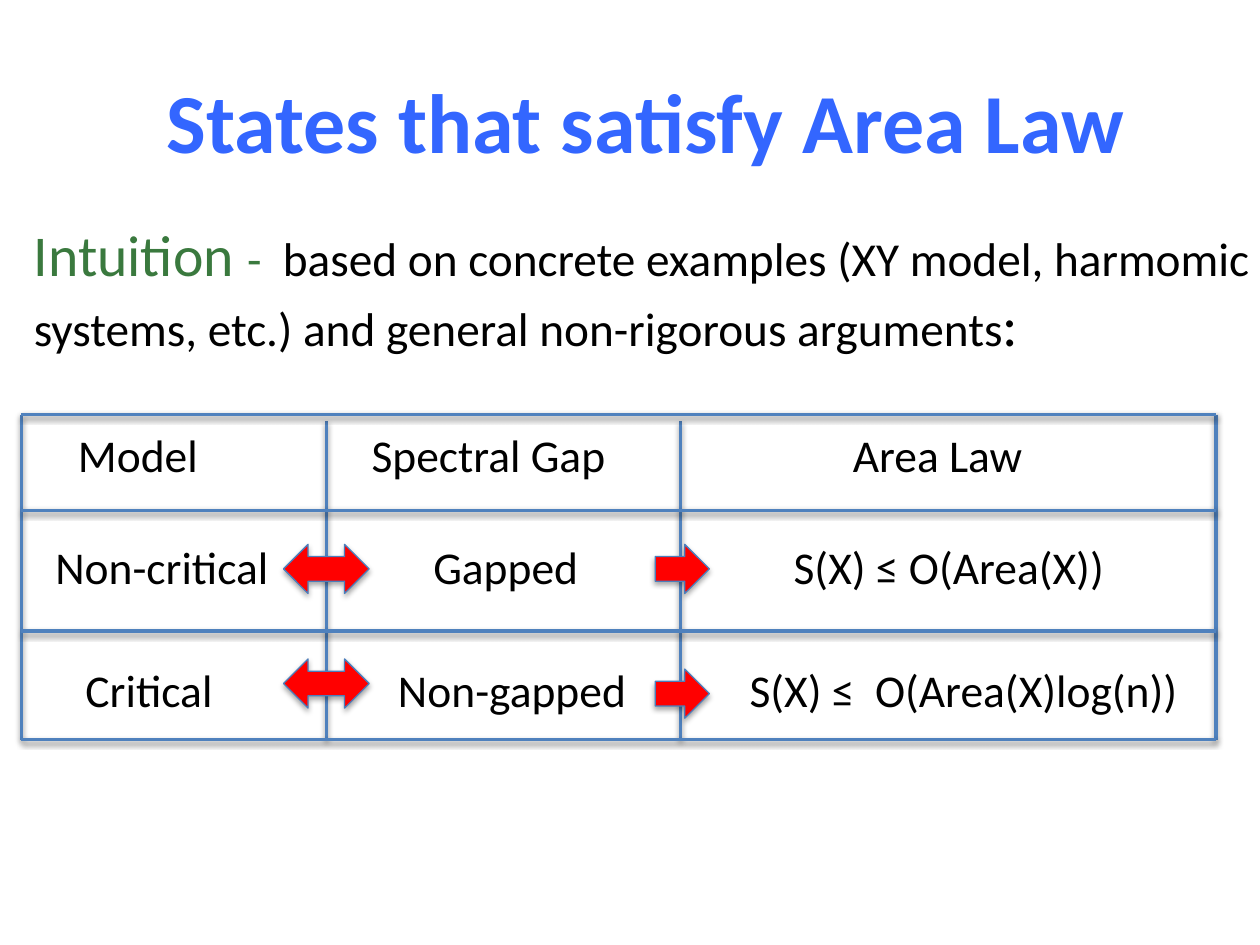
from lxml import etree
from pptx import Presentation
from pptx.dml.color import RGBColor
from pptx.enum.shapes import MSO_CONNECTOR, MSO_SHAPE
from pptx.enum.text import MSO_ANCHOR, PP_ALIGN
from pptx.oxml.ns import qn
from pptx.util import Inches, Pt

BLUE = RGBColor(0x33, 0x66, 0xFF)
GREEN = RGBColor(0x3A, 0x79, 0x3E)
BLACK = RGBColor(0, 0, 0)
RED = RGBColor(0xFF, 0, 0)
GRID = RGBColor(0x4F, 0x81, 0xBD)
OUTLINE = RGBColor(0x4B, 0x7E, 0xBC)
CENTER = PP_ALIGN.CENTER
MIDDLE = MSO_ANCHOR.MIDDLE
STRAIGHT = MSO_CONNECTOR.STRAIGHT
BOTH_WAYS = MSO_SHAPE.LEFT_RIGHT_ARROW
ONE_WAY = MSO_SHAPE.RIGHT_ARROW

INSET = 0.1
LEFT, RIGHT = 0.17, 9.65
TOP, BOTTOM = 3.29, 5.87
INNER_TOP = 3.34
# Each column entry: text and where it starts on the slide, in inches
HEADER = (("Model", 0.62), ("Spectral Gap", 2.95), ("Area Law", 6.77))
BODY = (
    (("Non-critical", 0.44), ("Gapped", 3.44), ("S(X) ≤ O(Area(X))", 6.3)),
    (("Critical", 0.68), ("Non-gapped", 3.16),
     ("S(X) ≤  O(Area(X)log(n))", 5.95)),
)
INTUITION = (
    ("Intuition ", 33, GREEN),
    ("-  ", 27, GREEN),
    ("based on concrete examples (XY model, harmomic systems, etc.) "
     "and general non-rigorous arguments", 27, BLACK),
    (":", 33, BLACK),
)
ARROWS = (
    (BOTH_WAYS, 2.25, 4.32, 0.68),
    (BOTH_WAYS, 2.25, 5.23, 0.68),
    (ONE_WAY, 5.2, 4.32, 0.43),
    (ONE_WAY, 5.2, 5.31, 0.43),
)


class SlideBuilder:
    def __init__(self, slide, font="Calibri"):
        self.s = slide
        self.font = font

    def style(self, font, size, color, bold=False):
        font.name, font.size, font.bold = self.font, Pt(size), bold
        font.color.rgb = color

    def title(self, text, x, y, w, h):
        sp = self.s.shapes.title
        sp.left, sp.top, sp.width, sp.height = map(Inches, (x, y, w, h))
        tf = sp.text_frame
        tf.text = text
        tf.vertical_anchor = MIDDLE
        p = tf.paragraphs[0]
        p.alignment = CENTER
        self.style(p.font, 48, BLUE, bold=True)

    def text_frame(self, x, y, w, h):
        tf = self.s.shapes.add_textbox(*map(Inches, (x, y, w, h))).text_frame
        tf.word_wrap = True
        return tf

    def text(self, runs, x, y, w, h):
        p = self.text_frame(x, y, w, h).paragraphs[0]
        for text, size, color in runs:
            r = p.add_run()
            r.text = text
            self.style(r.font, size, color)

    def columns(self, rows, x, y, w, h, top_inset=0.05, gap=0):
        """Add rows of text set in columns by tab stops, gap points apart."""
        tf = self.text_frame(x, y, w, h)
        tf.margin_top = Inches(top_inset)
        for i, row in enumerate(rows):
            p = tf.add_paragraph() if i else tf.paragraphs[0]
            p.text = "".join("\t" + text for text, _ in row)
            if i:
                p.space_before = Pt(gap)
            tabs = etree.SubElement(p._p.get_or_add_pPr(), qn("a:tabLst"))
            for _, start in row:
                pos = Inches(start - x - INSET)
                etree.SubElement(tabs, qn("a:tab"), pos=str(pos), algn="l")
            self.style(p.font, 26, BLACK)

    def line(self, x1, y1, x2, y2):
        """Add a grid line that keeps the soft shadow of the theme."""
        line = self.s.shapes.add_connector(
            STRAIGHT, *map(Inches, (x1, y1, x2, y2))).line
        line.color.rgb = GRID
        line.width = Pt(2)

    def arrow(self, kind, x, y, w, h=0.39):
        """Add a red block arrow that keeps the soft shadow of the theme."""
        sp = self.s.shapes.add_shape(kind, *map(Inches, (x, y, w, h)))
        sp.fill.solid()
        sp.fill.fore_color.rgb = RED
        sp.line.color.rgb = OUTLINE
        sp.line.width = Pt(0.75)


def main():
    prs = Presentation()
    prs.slide_width, prs.slide_height = Inches(10), Inches(7.5)
    slide = SlideBuilder(prs.slides.add_slide(prs.slide_layouts[5]))
    slide.title("States that satisfy Area Law", LEFT, 0, 9.91, 1.91)
    slide.text(INTUITION, LEFT, 1.69, 10, 2.34)
    slide.columns(BODY, LEFT, 4.18, 9.62, 1.57, top_inset=0.1, gap=39)
    for x, top in ((LEFT, TOP), (2.59, INNER_TOP), (5.4, INNER_TOP),
                   (RIGHT, TOP)):
        slide.line(x, top, x, BOTTOM)
    for y in (TOP, 4.05, 5.01, BOTTOM):
        slide.line(LEFT, y, RIGHT, y)
    for arrow in ARROWS:
        slide.arrow(*arrow)
    slide.columns([HEADER], 0.29, INNER_TOP, 9.35, 0.54)
    prs.save("out.pptx")


if __name__ == "__main__":
    main()
